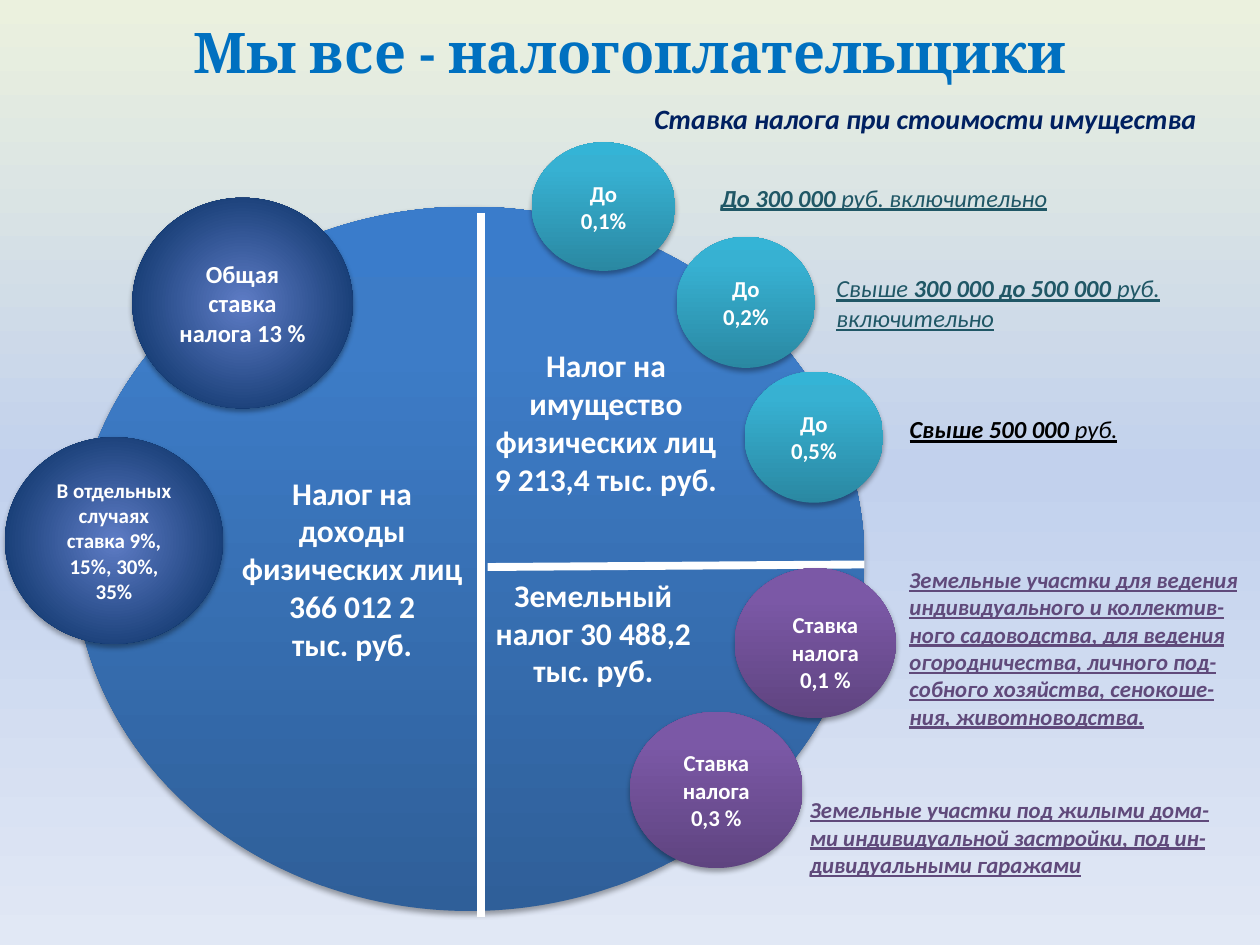
from dataclasses import dataclass
from lxml.etree import SubElement
from pptx import Presentation
from pptx.dml.color import RGBColor
from pptx.enum.shapes import MSO_CONNECTOR, MSO_SHAPE
from pptx.enum.text import MSO_ANCHOR, MSO_AUTO_SIZE, PP_ALIGN
from pptx.oxml.ns import qn
from pptx.util import Inches, Pt


@dataclass
class Theme:
    body: str = "Calibri"
    head: str = "Cambria"
    white: str = "FFFFFF"
    title: str = "0070C0"
    navy: str = "002060"
    teal: str = "205766"
    black: str = "000000"
    plum: str = "604A7B"
    huge: int = 32
    big: int = 18
    sub: int = 16
    mid: int = 14
    note: int = 13
    small: int = 12
    rule: float = 4.5
    back: tuple = ((0, "EBF1DE"), (50, "C2D1ED"), (100, "E1E8F5"))
    blue: tuple = ((0, "2F5F99"), (80, "3D7CC7"), (100, "3A7CCB"))
    aqua: tuple = ((0, "2A88A2"), (80, "37B1D2"), (100, "34B4D6"))
    grape: tuple = ((0, "5F4480"), (80, "7B58A6"), (100, "7C57A8"))
    glow: tuple = ((0, "5E7CC5"), (100, "00295C"))


T = Theme()

DISC = (0.59, 1.64, 6.27, 5.59)
RULES = [(3.82, 1.69, 3.82, 7.28), (3.87, 4.5, 6.86, 4.48)]

BALLS = [
    ((1.05, 1.57, 1.75, 1.67), T.glow, T.mid, "Общая ставка налога 13 %"),
    ((0.04, 3.47, 1.73, 1.64), T.glow, T.small,
     "В отдельных случаях ставка 9%, 15%, 30%, 35%"),
    ((4.22, 1.13, 1.14, 1.02), T.aqua, T.note, "До 0,1%"),
    ((5.37, 1.88, 1.1, 1.04), T.aqua, T.note, "До 0,2%"),
    ((5.91, 2.95, 1.1, 1.04), T.aqua, T.note, "До 0,5%"),
    ((5.83, 4.51, 1.28, 1.19), T.grape, T.note, ""),
    ((5, 5.65, 1.37, 1.24), T.grape, T.note, "Ставка налога 0,3 %"),
]

LABELS = [
    ((1.77, 3.71, 2.05, 1.62), T.big,
     ["Налог на доходы физических лиц 366 012 2", "тыс. руб."]),
    ((3.71, 2.7, 2.2, 1.31), T.big,
     ["Налог на имущество", "физических лиц", "9 213,4 тыс. руб."]),
    ((3.73, 4.52, 1.96, 1.31), T.big, ["Земельный налог 30 488,2 тыс. руб."]),
    ((5.91, 4.8, 1.28, 0.76), T.note, ["Ставка налога", "0,1 %"]),
]

NOTES = [
    ((5.62, 1.4, 2.81, 0.34), T.mid, T.teal,
     [("До 300 000 ", True), ("руб. включительно", False)]),
    ((6.54, 2.12, 3.2, 0.57), T.mid, T.teal,
     [("Свыше ", False), ("300 000 до 500 000 ", True),
      ("руб. включительно", False)]),
    ((7.12, 3.24, 2.15, 0.34), T.mid, T.black,
     [("Свыше 500 000", True), (" руб.", False)]),
    ((7.12, 4.44, 2.84, 1.41), T.note, T.plum,
     [("Земельные участки для ведения индивидуального и коллектив-ного "
       "садоводства, для ведения огородничества, личного под-собного "
       "хозяйства, сенокоше-ния, животноводства.", True)]),
    ((6.33, 6.27, 3.55, 0.76), T.note, T.plum,
     [("Земельные участки под жилыми дома-ми индивидуальной застройки, "
       "под ин-дивидуальными гаражами", True)]),
]


def node(root, tag, **attrs):
    return SubElement(root, qn("a:" + tag), {k: str(v) for k, v in attrs.items()})


def shade(fill, root, stops, ang):
    fill.gradient()
    grad = root.find(".//" + qn("a:gradFill"))
    for kid in list(grad):
        grad.remove(kid)
    row = node(grad, "gsLst")
    for pos, color in stops:
        node(node(row, "gs", pos=pos * 1000), "srgbClr", val=color)
    if ang is None:
        way = node(grad, "path", path="circle")
        node(way, "fillToRect", l=50000, t=50000, r=50000, b=50000)
    else:
        node(grad, "lin", ang=ang * 60000, scaled=0)


def write(frame, paras, align, size, color, **extra):
    frame.word_wrap = True
    look = {"name": T.body, "size": Pt(size), "bold": True} | extra
    for i, runs in enumerate(paras):
        para = frame.add_paragraph() if i else frame.paragraphs[0]
        para.alignment = align
        for text, bold in runs:
            run = para.add_run()
            run.text = text
            for key, val in (look | {"bold": bold}).items():
                setattr(run.font, key, val)
            run.font.color.rgb = RGBColor.from_string(color)


def ball(slide, box, stops, size=T.note, text=""):
    item = slide.shapes.add_shape(MSO_SHAPE.OVAL, *map(Inches, box))
    item.shadow.inherit = False
    shade(item.fill, item._element.spPr, stops, None if stops == T.glow else 270)
    item.line.fill.background()
    glow = item._element.spPr.find(qn("a:effectLst"))
    drop = node(glow, "outerShdw", blurRad=Pt(3.1), dist=Pt(1.8),
                dir=90 * 60000, rotWithShape=0)
    node(node(drop, "srgbClr", val=T.black), "alpha", val=35000)
    if text:
        item.text_frame.vertical_anchor = MSO_ANCHOR.MIDDLE
        write(item.text_frame, [[(text, True)]], PP_ALIGN.CENTER, size, T.white)


def label(slide, box, paras, align, size, color, **extra):
    frame = slide.shapes.add_textbox(*map(Inches, box)).text_frame
    write(frame, paras, align, size, color, **extra)
    frame.auto_size = MSO_AUTO_SIZE.SHAPE_TO_FIT_TEXT
    return frame


def rule(slide, ends):
    line = slide.shapes.add_connector(MSO_CONNECTOR.STRAIGHT, *map(Inches, ends))
    line.line.width = Pt(T.rule)
    line.line.color.rgb = RGBColor.from_string(T.white)
    node(line._element.spPr, "effectLst")


def main():
    deck = Presentation()
    deck.slide_width, deck.slide_height = Inches(10), Inches(7.5)
    slide = deck.slides.add_slide(deck.slide_layouts[6])
    shade(slide.background.fill, slide._element, T.back, 90)
    mid = PP_ALIGN.CENTER

    head = label(slide, (0.5, 0.21, 9, 0.39),
                 [[("Мы все - налогоплательщики", True)]],
                 mid, T.huge, T.title, name=T.head)
    head.auto_size = MSO_AUTO_SIZE.NONE
    head.vertical_anchor = MSO_ANCHOR.MIDDLE

    ball(slide, DISC, T.blue)
    for ends in RULES:
        rule(slide, ends)
    for item in BALLS:
        ball(slide, *item)
    for box, size, lines in LABELS:
        label(slide, box, [[(text, True)] for text in lines], mid, size, T.white)
    label(slide, (5.07, 0.76, 4.55, 0.37),
          [[("Ставка налога при стоимости имущества", True)]],
          mid, T.sub, T.navy, italic=True)
    for box, size, color, runs in NOTES:
        label(slide, box, [runs], PP_ALIGN.LEFT, size, color,
              italic=True, underline=True)
    deck.save("out.pptx")


if __name__ == "__main__":
    main()
